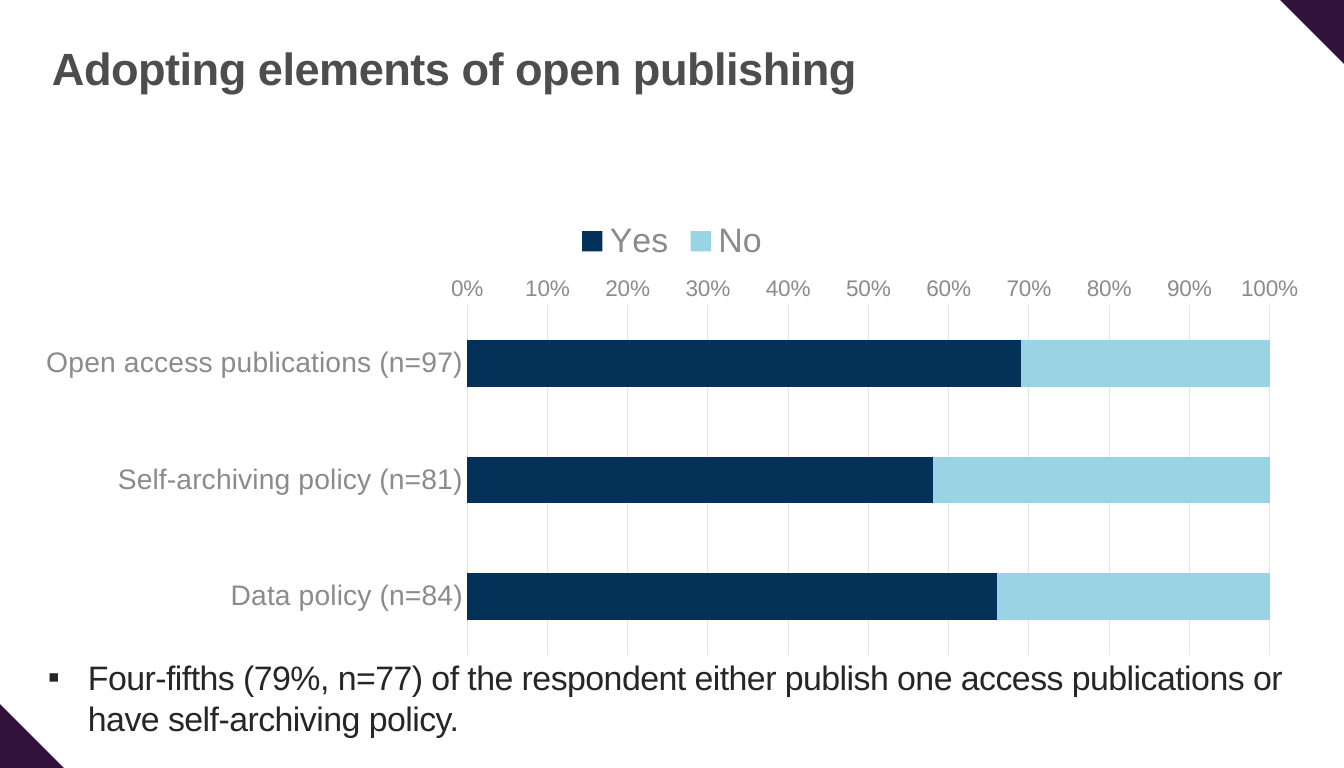
"""Build a slide with a stacked bar chart on adopting elements of open publishing."""
from lxml import etree
from pptx import Presentation
from pptx.chart.data import CategoryChartData
from pptx.dml.color import RGBColor
from pptx.enum.chart import XL_CHART_TYPE, XL_LEGEND_POSITION, XL_TICK_MARK
from pptx.enum.shapes import MSO_SHAPE
from pptx.oxml.ns import qn
from pptx.util import Cm, Pt

BAR_STACKED = XL_CHART_TYPE.BAR_STACKED
LEGEND_TOP = XL_LEGEND_POSITION.TOP
NO_TICK = XL_TICK_MARK.NONE
RECTANGLE = MSO_SHAPE.RECTANGLE

FONT = "Arial"
COLORS = {
    "corner": "30123A",
    "title": "4D4D4D",
    "body": "262626",
    "label": "8B8B8B",
    "grid": "E4E4E4",
    "Yes": "043158",
    "No": "99D3E4",
}
WIDTH, HEIGHT, CORNER_SIDE = 33.6, 19.2, 2.26
CATEGORIES = [
    "Open access publications (n=97)",
    "Self-archiving policy (n=81)",
    "Data policy (n=84)",
]
SERIES = {"Yes": (0.69, 0.58, 0.66), "No": (0.31, 0.42, 0.35)}
CHART_BOX = (0.5, 5.2, 32.6, 11.4)
PLOT_BOX = (11.68, 7.63, 20.06, 8.74)


def color(name):
    return RGBColor.from_string(COLORS[name])


def style_font(font, size, color_name):
    font.name = FONT
    font.size = Pt(size)
    font.color.rgb = color(color_name)


def add_corner(slide, center_x, center_y):
    half = CORNER_SIDE / 2
    box = (center_x - half, center_y - half, CORNER_SIDE, CORNER_SIDE)
    shape = slide.shapes.add_shape(RECTANGLE, *map(Cm, box))
    shape.rotation = 45
    shape.shadow.inherit = False
    shape.fill.solid()
    shape.fill.fore_color.rgb = color("corner")
    shape.line.fill.background()


def add_text(slide, box, text, size, color_name, bold=False):
    frame = slide.shapes.add_textbox(*map(Cm, box)).text_frame
    frame.word_wrap = True
    frame.margin_left = frame.margin_right = Cm(0.1)
    frame.margin_top = frame.margin_bottom = Cm(0.1)
    frame.text = text
    paragraph = frame.paragraphs[0]
    run = paragraph.runs[0]
    style_font(run.font, size, color_name)
    run.font.bold = bold
    run._r.get_or_add_rPr().set("spc", "-40")
    return paragraph


def add_bullet(paragraph, indent):
    properties = paragraph._p.get_or_add_pPr()
    properties.set("marL", str(Cm(indent)))
    properties.set("indent", str(-Cm(indent)))
    etree.SubElement(properties, qn("a:buFont")).set("typeface", FONT)
    etree.SubElement(properties, qn("a:buChar")).set("char", "▪")


def style_axis(axis, size):
    axis.major_tick_mark = axis.minor_tick_mark = NO_TICK
    style_font(axis.tick_labels.font, size, "label")


def style_line(line):
    line.color.rgb = color("grid")
    line.width = Pt(0.75)


def set_plot_layout(chart, chart_box, plot_box):
    chart_left, chart_top, chart_width, chart_height = chart_box
    left, top, width, height = plot_box
    settings = {
        "layoutTarget": "inner",
        "xMode": "edge",
        "yMode": "edge",
        "x": (left - chart_left) / chart_width,
        "y": (top - chart_top) / chart_height,
        "w": width / chart_width,
        "h": height / chart_height,
    }
    layout = etree.Element(qn("c:layout"))
    manual = etree.SubElement(layout, qn("c:manualLayout"))
    for tag, value in settings.items():
        etree.SubElement(manual, qn(f"c:{tag}")).set("val", str(value))
    chart._chartSpace.find(f".//{qn('c:plotArea')}").insert(0, layout)


def add_bar_chart(slide, box, plot_box):
    data = CategoryChartData(number_format="0%")
    data.categories = CATEGORIES
    for name, values in SERIES.items():
        data.add_series(name, values)
    chart = slide.shapes.add_chart(BAR_STACKED, *map(Cm, box), data).chart
    style_font(chart.font, 10, "title")
    chart.has_title = False
    chart.has_legend = True
    chart.legend.position = LEGEND_TOP
    chart.legend.include_in_layout = False
    style_font(chart.legend.font, 24, "label")

    plot = chart.plots[0]
    plot.gap_width = 150
    plot.overlap = 100
    plot.vary_by_categories = False
    for series in plot.series:
        series.format.fill.solid()
        series.format.fill.fore_color.rgb = color(series.name)

    category_axis = chart.category_axis
    style_axis(category_axis, 20)
    category_axis.reverse_order = True
    style_line(category_axis.format.line)

    value_axis = chart.value_axis
    style_axis(value_axis, 16)
    value_axis.minimum_scale = 0
    value_axis.maximum_scale = 1
    value_axis.major_unit = 0.1
    value_axis.tick_labels.number_format = "0%"
    value_axis.tick_labels.number_format_is_linked = False
    value_axis.format.line.fill.background()
    style_line(value_axis.major_gridlines.format.line)
    set_plot_layout(chart, box, plot_box)


def main():
    presentation = Presentation()
    presentation.slide_width = Cm(WIDTH)
    presentation.slide_height = Cm(HEIGHT)
    slide = presentation.slides.add_slide(presentation.slide_layouts[6])

    add_corner(slide, 0, HEIGHT)
    add_corner(slide, WIDTH, 0)
    title = add_text(slide, (1.2, 1, 31.2, 3), "Adopting elements of open publishing",
                     32, "title", bold=True)
    title.line_spacing = 0.95
    add_bar_chart(slide, CHART_BOX, PLOT_BOX)
    finding = add_text(
        slide, (1.1, 16.32, 31.4, 2.8),
        "Four-fifths (79%, n=77) of the respondent either publish one access publications "
        "or have self-archiving policy.", 24, "body")
    finding.space_after = Pt(6)
    add_bullet(finding, 1)

    presentation.save("out.pptx")


if __name__ == "__main__":
    main()
